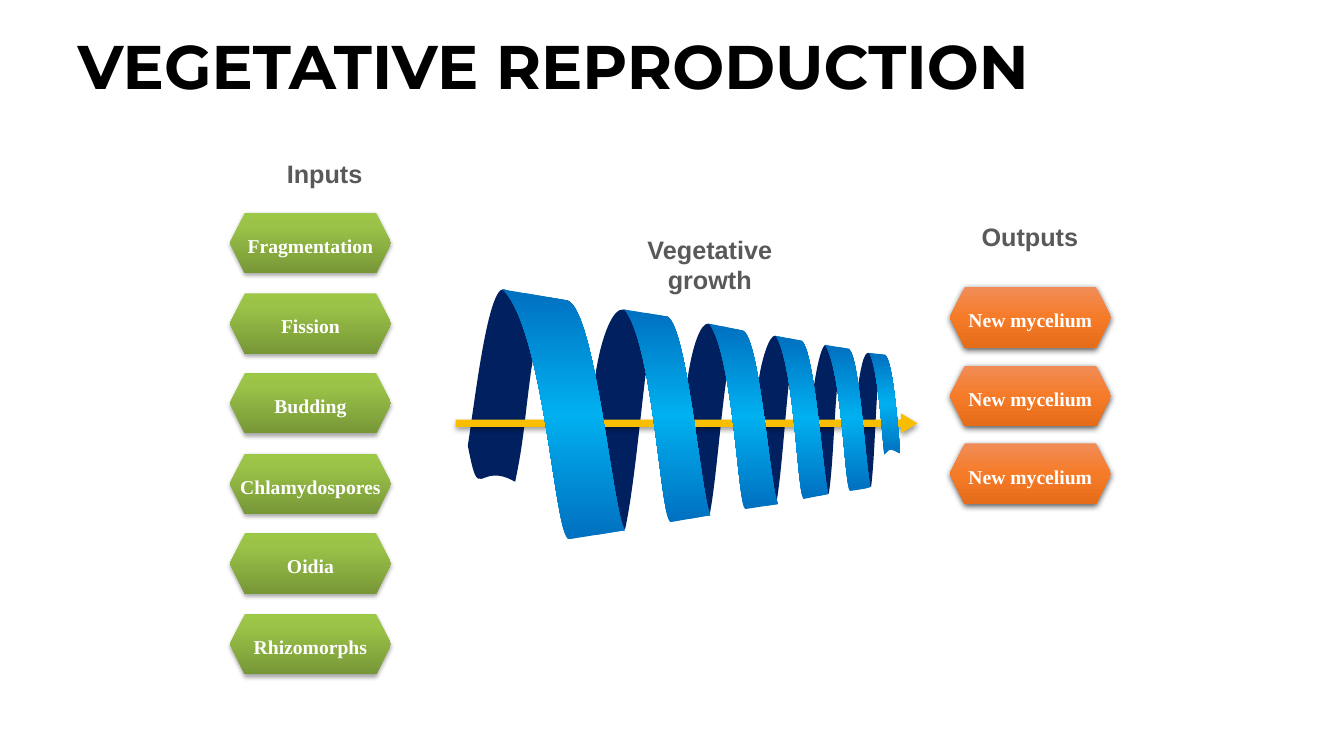
from lxml.etree import SubElement as Sub
from pptx import Presentation
from pptx.dml.color import RGBColor as RGB
from pptx.enum.shapes import MSO_SHAPE as Kind
from pptx.enum.text import MSO_ANCHOR as Anchor, MSO_AUTO_SIZE as Auto, PP_ALIGN as Align
from pptx.oxml.ns import qn
from pptx.util import Pt

PX = 9144  # 100 px to the inch

HEX = {"navy": "002060", "blue": "0070C0", "sky": "00B0F0", "gold": "FABE00",
       "black": "000000", "gray": "595959", "white": "FFFFFF",
       "lime": "9DC746", "leaf": "9BC348", "moss": "779737",
       "peach": "F18C57", "orange": "F67B28", "rust": "E56C19"}

# Stops from top to bottom: percent, colour
RIBBON = [(0, "blue"), (50, "sky"), (100, "blue")]
GREEN = [(0, "lime"), (20, "leaf"), (100, "moss")]
ORANGE = [(0, "peach"), (50, "orange"), (100, "rust")]

INPUTS = ["Fragmentation", "Fission", "Budding", "Chlamydospores", "Oidia", "Rhizomorphs"]
OUTPUTS = ["New mycelium"] * 3

# Outlines of the coil in px: a start, then lines (2 numbers) and curves (6 numbers)
BACKS = [
    [(464, 442), (471, 398, 484, 283, 500, 287), (516, 291, 536, 325, 527, 366),
     (519, 426, 520, 434, 511, 478), (473, 456, 476, 504, 464, 442)],
    [(591, 369), (597, 332, 608, 306, 618, 307), (627, 308, 648, 340, 640, 374),
     (634, 424, 628, 488, 620, 525), (589, 507, 581, 427, 591, 369)],
    [(682, 375), (687, 342, 695, 320, 703, 321), (710, 322, 725, 349, 720, 379),
     (714, 422, 710, 478, 704, 510), (681, 494, 678, 406, 682, 375)],
    [(752, 381), (755, 357, 763, 332, 769, 333), (775, 334, 787, 358, 782, 384),
     (778, 422, 775, 471, 770, 499), (751, 485, 750, 404, 752, 381)],
    [(807, 385), (810, 364, 815, 342, 819, 342), (824, 343, 833, 364, 830, 388),
     (827, 422, 826, 465, 822, 490), (808, 478, 804, 407, 807, 385)],
    [(850, 388), (852, 380, 855, 350, 861, 350), (867, 350, 874, 370, 870, 391),
     (868, 421, 867, 460, 864, 483), (851, 472, 848, 408, 850, 388)],
]
FRONTS = [
    [(564, 535), (620, 526), (608, 514, 591, 309, 563, 298),
     (498, 287), (540, 325, 550, 531, 564, 535)],
    [(665, 518), (705, 511), (696, 501, 682, 324, 662, 314),
     (619, 307), (648, 339, 655, 514, 665, 518)],
    [(739, 505), (772, 500), (764, 491, 754, 336, 737, 328),
     (703, 321), (727, 349, 732, 501, 739, 505)],
    [(797, 495), (822, 490), (817, 483, 808, 345, 795, 338),
     (769, 333), (788, 358, 791, 492, 797, 495)],
    [(843, 487), (851, 486, 857, 485, 864, 483), (859, 476, 853, 353, 842, 346),
     (818, 342), (835, 364, 838, 484, 843, 487)],
    [(862, 350), (878, 352), (885, 357, 890, 415, 893, 450),
     (890, 449, 887, 446, 883, 446), (880, 446, 880, 450, 877, 451),
     (874, 417, 870, 363, 862, 350)],
]


def color(name):
    return RGB.from_string(HEX[name])


def paint(shape, fill, angle=270):
    """Fill with a colour name or a list of stops; drop line and shadow."""
    shape.line.fill.background()
    shape.shadow.inherit = False
    if isinstance(fill, str):
        shape.fill.solid()
        shape.fill.fore_color.rgb = color(fill)
        return
    shape.fill.gradient()
    shape.fill.gradient_angle = angle
    stops = next(shape._element.spPr.iter(qn("a:gsLst")))
    stops.clear()
    for pos, name in fill:
        stop = Sub(stops, qn("a:gs"), pos=str(pos * 1000))
        Sub(stop, qn("a:srgbClr"), val=HEX[name])


def shade(shape, alpha, blur, dist):
    """Cast a black shadow straight down."""
    effects = shape._element.spPr.find(qn("a:effectLst"))
    cast = Sub(effects, qn("a:outerShdw"), blurRad=str(Pt(blur)), dist=str(Pt(dist)),
               dir="5400000", algn="ctr", rotWithShape="0")
    tone = Sub(cast, qn("a:srgbClr"), val=HEX["black"])
    Sub(tone, qn("a:alpha"), val=str(alpha * 1000))


def place(shapes, kind, *box):
    return shapes.add_shape(kind, *(n * PX for n in box))


def write(shape, text, size, font, tone, align=Align.CENTER):
    para = shape.text_frame.paragraphs[0]
    para.alignment = align
    run = para.add_run()
    run.text = text
    run.font.size = Pt(size)
    run.font.name = font
    run.font.bold = True
    run.font.color.rgb = color(tone)
    return para


def turn(outline):
    """Give each part as EMU points, a quarter turn clockwise about the middle."""
    xs, ys = zip(*(part[-2:] for part in outline))
    mx, my = (min(xs) + max(xs)) / 2, (min(ys) + max(ys)) / 2
    return [[(round((mx + my - y) * PX), round((my + x - mx) * PX))
             for x, y in zip(part[::2], part[1::2])] for part in outline]


def add_band(shapes, outline, fill):
    """Draw a turned outline, bend its curves, then turn it back."""
    parts = turn(outline)
    ends = [part[-1] for part in parts]
    pen = shapes.build_freeform(*ends[0], scale=1.0)
    pen.add_line_segments(ends[1:], close=True)
    band = pen.convert_to_shape()
    left, top = band.left, band.top
    lines = list(band._element.spPr.iter(qn("a:lnTo")))
    for line, part in zip(lines, parts[1:]):
        if len(part) == 3:
            line.clear()
            line.tag = qn("a:cubicBezTo")
            for x, y in part:
                Sub(line, qn("a:pt"), x=str(x - left), y=str(y - top))
    band.rotation = 270
    paint(band, fill, 0)


def add_arrow(shapes):
    arrow = place(shapes, Kind.RIGHT_ARROW, 452, 410, 458, 20)
    arrow.adjustments[0] = 0.36
    arrow.adjustments[1] = 0.83
    paint(arrow, "gold")
    shade(arrow, 40, 4, 2)


def add_stack(shapes, names, left, top, span, fill, shadow):
    """Stack hexagons, with span px from the first top to the last."""
    for i, name in enumerate(names):
        drop = round(span * i / (len(names) - 1))
        cell = place(shapes, Kind.HEXAGON, left, top + drop, 160, 60)
        paint(cell, fill)
        shade(cell, *shadow)
        frame = cell.text_frame
        frame.word_wrap = False
        frame.vertical_anchor = Anchor.MIDDLE
        frame.margin_top = 10 * PX
        frame.margin_bottom = 5 * PX
        write(cell, name, 14, "Times New Roman", "white")


def add_label(shapes, text, *box):
    label = shapes.add_textbox(*(n * PX for n in box))
    label.text_frame.word_wrap = True
    label.text_frame.vertical_anchor = Anchor.MIDDLE
    write(label, text, 18, "Arial", "gray")


def set_title(title, text):
    title.left, title.top, title.width, title.height = (n * PX for n in (67, 30, 1200, 78))
    title.text_frame.auto_size = Auto.NONE
    title.text_frame.vertical_anchor = Anchor.MIDDLE
    para = write(title, text, 44, "Montserrat", "black", Align.LEFT)
    para.line_spacing = 0.9


def main():
    deck = Presentation()
    deck.slide_width, deck.slide_height = 1333 * PX, 750 * PX
    slide = deck.slides.add_slide(deck.slide_layouts[5])
    shapes = slide.shapes
    set_title(shapes.title, "VEGETATIVE REPRODUCTION")
    for outline in BACKS:
        add_band(shapes, outline, "navy")
    add_arrow(shapes)
    for outline in FRONTS:
        add_band(shapes, outline, RIBBON)
    add_stack(shapes, OUTPUTS, 942, 285, 155, ORANGE, (63, 4.5, 1.5))
    add_label(shapes, "Inputs", 265, 156, 114, 33)
    add_label(shapes, "Outputs", 960, 218, 123, 33)
    add_label(shapes, "Vegetative growth", 624, 228, 160, 69)
    add_stack(shapes, INPUTS, 228, 211, 398, GREEN, (35, 3.1, 1.8))
    deck.save("out.pptx")


if __name__ == "__main__":
    main()
